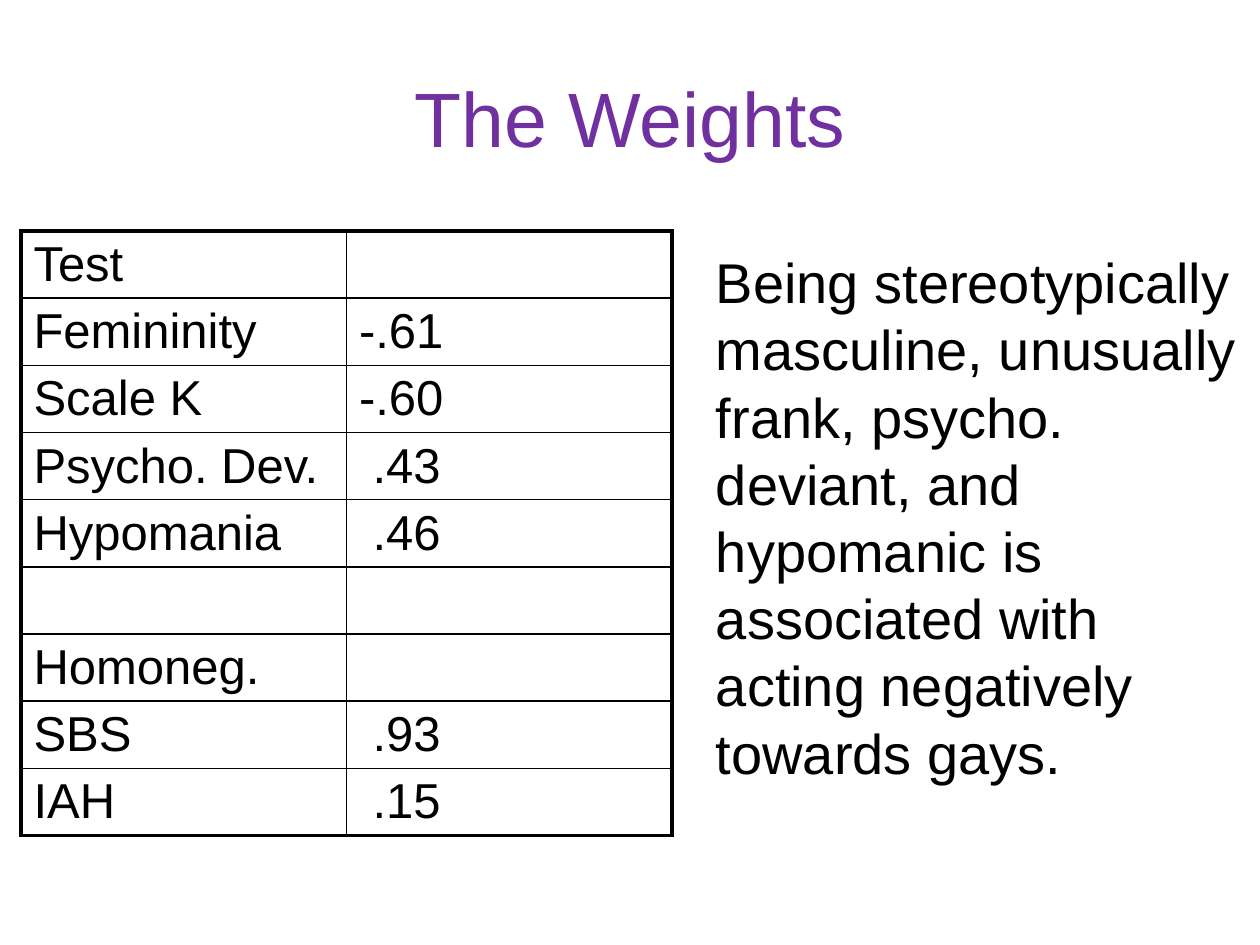
"""Build the slide of canonical weights with its reading."""
from dataclasses import dataclass

from lxml.etree import SubElement
from pptx import Presentation
from pptx.dml.color import RGBColor as Color
from pptx.enum.text import MSO_ANCHOR as Anchor, PP_ALIGN as Align
from pptx.oxml.ns import qn
from pptx.util import Pt


@dataclass(frozen=True)
class Theme:
    font: str = "Arial"
    title_color: str = "7030A0"
    ink: str = "000000"
    title_size: float = 44
    body_size: float = 32
    cell_size: float = 28
    outer_line: float = 2.25
    inner_line: float = 1


WEIGHTS = [
    ("Test", ""),
    ("Femininity", "-.61"),
    ("Scale K", "-.60"),
    ("Psycho. Dev.", " .43"),
    ("Hypomania", " .46"),
    ("", ""),
    ("Homoneg.", ""),
    ("SBS", " .93"),
    ("IAH", " .15"),
]
READING = (
    "Being stereotypically masculine, unusually frank, psycho. deviant, "
    "and hypomanic is associated with acting negatively towards gays."
)


def write_text(frame, text, *, font, size, color, align=Align.LEFT, line=None):
    para = frame.paragraphs[0]
    para.alignment = align
    if line:
        para.line_spacing = Pt(line)
    span = para.add_run()
    span.text = text
    span.font.name = font
    span.font.size = Pt(size)
    span.font.color.rgb = Color.from_string(color)


def draw_borders(cell, widths, color):
    props = cell._tc.get_or_add_tcPr()
    for index, (side, width) in enumerate(widths.items()):
        line = SubElement(props, qn(f"a:ln{side}"), w=str(Pt(width)))
        fill = SubElement(line, qn("a:solidFill"))
        SubElement(fill, qn("a:srgbClr"), val=color)
        props.insert(index, line)


class SlideBuilder:
    def __init__(self, deck, theme):
        self.theme = theme
        self.page = deck.slides.add_slide(deck.slide_layouts[5])

    def title(self, text, left, top, width, height):
        box = self.page.shapes.title
        box.left, box.top, box.width, box.height = map(Pt, (left, top, width, height))
        box.text_frame.vertical_anchor = Anchor.MIDDLE
        write_text(box.text_frame, text, font=self.theme.font, size=self.theme.title_size,
                   color=self.theme.title_color, align=Align.CENTER)

    def table(self, rows, left, top, column_width, row_height):
        theme = self.theme
        row_count, column_count = len(rows), len(rows[0])
        table = self.page.shapes.add_table(
            row_count, column_count, Pt(left), Pt(top),
            Pt(column_width * column_count), Pt(row_height * row_count)).table
        table.first_row = table.horz_banding = False
        for row in table.rows:
            row.height = Pt(row_height)
        for r, texts in enumerate(rows):
            for c, text in enumerate(texts):
                cell = table.cell(r, c)
                cell.margin_left = cell.margin_right = Pt(7.2)
                cell.margin_top, cell.margin_bottom = Pt(3.6), Pt(2.6)
                cell.fill.background()
                edges = {"L": c == 0, "R": c == column_count - 1,
                         "T": r == 0, "B": r == row_count - 1}
                widths = {side: theme.outer_line if outer else theme.inner_line
                          for side, outer in edges.items()}
                draw_borders(cell, widths, theme.ink)
                if text:
                    write_text(cell.text_frame, text, font=theme.font,
                               size=theme.cell_size, color=theme.ink)

    def text(self, text, left, top, width, height):
        box = self.page.shapes.add_textbox(*map(Pt, (left, top, width, height)))
        box.text_frame.word_wrap = True
        write_text(box.text_frame, text, font=self.theme.font, size=self.theme.body_size,
                   color=self.theme.ink, line=self.theme.body_size * 1.2)


def main():
    deck = Presentation()
    deck.slide_width, deck.slide_height = Pt(720), Pt(540)
    builder = SlideBuilder(deck, Theme())
    builder.title("The Weights", 36, 21.6, 648, 90)
    builder.table(WEIGHTS, 12, 132, column_width=186, row_height=38.4)
    builder.text(READING, 402, 138, 318, 314)
    deck.save("out.pptx")


if __name__ == "__main__":
    main()
